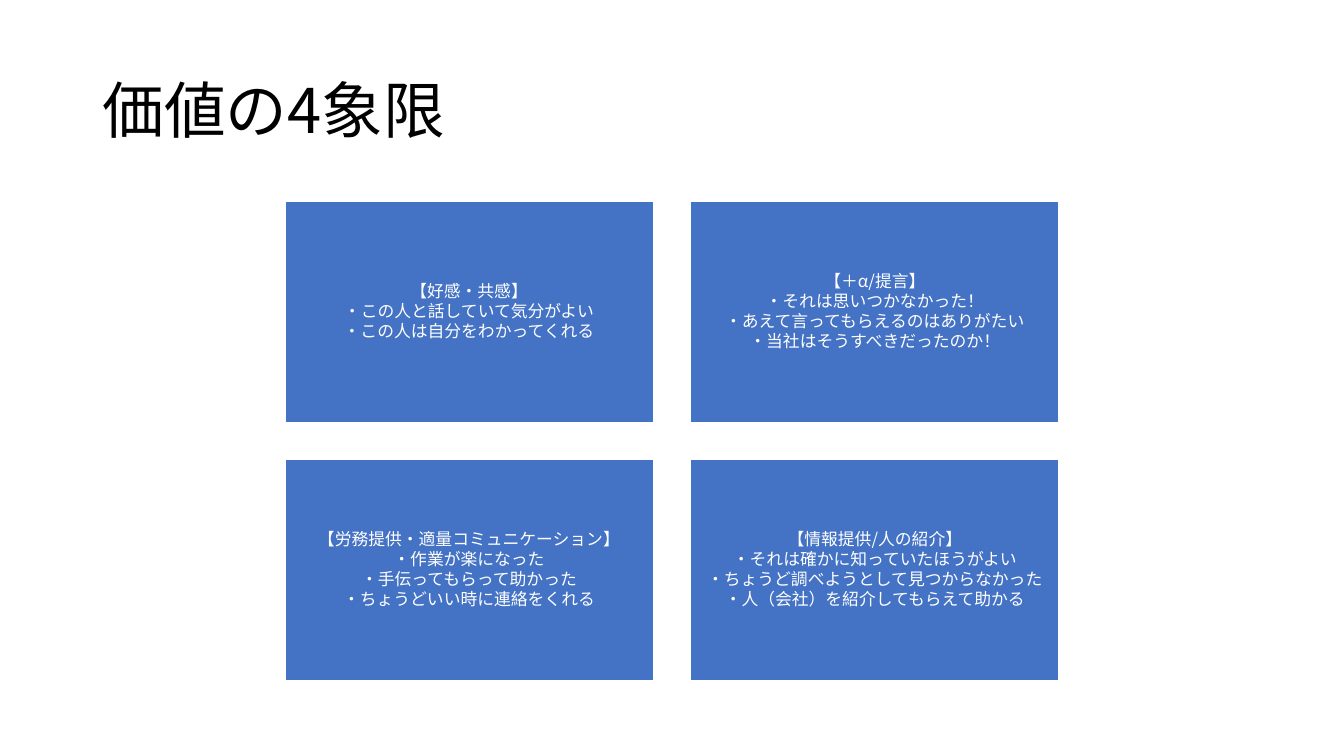
from lxml import etree
from pptx import Presentation, util as u
from pptx.dml.color import RGBColor
from pptx.enum import shapes, text
from pptx.oxml import ns

WIDTH, HEIGHT = 13.33, 7.5
FONT = "Noto Sans CJK JP"
COLORS = {"title": "000000", "card": "4472C4", "card_text": "FFFFFF", "line": "FFFFFF"}

QUADRANTS = [
    ["【好感・共感】",
     "・この人と話していて気分がよい",
     "・この人は自分をわかってくれる"],
    ["【＋α/提言】",
     "・それは思いつかなかった！",
     "・あえて言ってもらえるのはありがたい",
     "・当社はそうすべきだったのか！"],
    ["【労務提供・適量コミュニケーション】",
     "・作業が楽になった",
     "・手伝ってもらって助かった",
     "・ちょうどいい時に連絡をくれる"],
    ["【情報提供/人の紹介】",
     "・それは確かに知っていたほうがよい",
     "・ちょうど調べようとして見つからなかった",
     "・人（会社）を紹介してもらえて助かる"],
]


def rgb(name):
    return RGBColor.from_string(COLORS[name])


def write_text(shape, lines, *, size, color, align=text.PP_ALIGN.LEFT, inset=None, after=0):
    frame = shape.text_frame
    frame.word_wrap = True
    frame.vertical_anchor = text.MSO_ANCHOR.MIDDLE
    if inset is not None:
        frame.margin_left = frame.margin_right = u.Inches(inset)
        frame.margin_top = frame.margin_bottom = u.Inches(inset)
    for index, line in enumerate(lines):
        paragraph = frame.paragraphs[0] if index == 0 else frame.add_paragraph()
        paragraph.alignment = align
        paragraph.line_spacing = 0.9
        paragraph.space_after = u.Pt(after)
        run = paragraph.add_run()
        run.text = line
        run.font.size = u.Pt(size)
        run.font.name = FONT
        run.font.color.rgb = rgb(color)
        # Japanese glyphs take their font from the East Asian slot
        east_asian = etree.SubElement(run.font._element, ns.qn("a:ea"))
        east_asian.set("typeface", FONT)


def add_title(slide, left, top, width, height):
    box = slide.shapes.add_textbox(*map(u.Inches, (left, top, width, height)))
    write_text(box, ["価値の4象限"], size=44, color="title")


def add_card(slide, lines, left, top, width, height):
    card = slide.shapes.add_shape(
        shapes.MSO_SHAPE.RECTANGLE, *map(u.Inches, (left, top, width, height)))
    card.shadow.inherit = False
    card.fill.solid()
    card.fill.fore_color.rgb = rgb("card")
    card.line.color.rgb = rgb("line")
    card.line.width = u.Pt(1)
    write_text(card, lines, size=12, color="card_text",
               align=text.PP_ALIGN.CENTER, inset=0.05, after=1.5)


def add_quadrants(slide, left, top, width, height, columns=2, rows=2, gap=0.37):
    card_width = (width - gap * (columns - 1)) / columns
    card_height = (height - gap * (rows - 1)) / rows
    for index, lines in enumerate(QUADRANTS):
        row, column = divmod(index, columns)
        add_card(slide, lines,
                 left + column * (card_width + gap),
                 top + row * (card_height + gap),
                 card_width, card_height)


def main():
    presentation = Presentation()
    presentation.slide_width = u.Inches(WIDTH)
    presentation.slide_height = u.Inches(HEIGHT)
    slide = presentation.slides.add_slide(presentation.slide_layouts[6])

    # Heading
    add_title(slide, 0.92, 0.4, 11.5, 1.45)

    # Four value cards, centred on the slide
    grid_width = 7.68
    add_quadrants(slide, (WIDTH - grid_width) / 2, 2, grid_width, 4.75)

    presentation.save("out.pptx")


if __name__ == "__main__":
    main()
